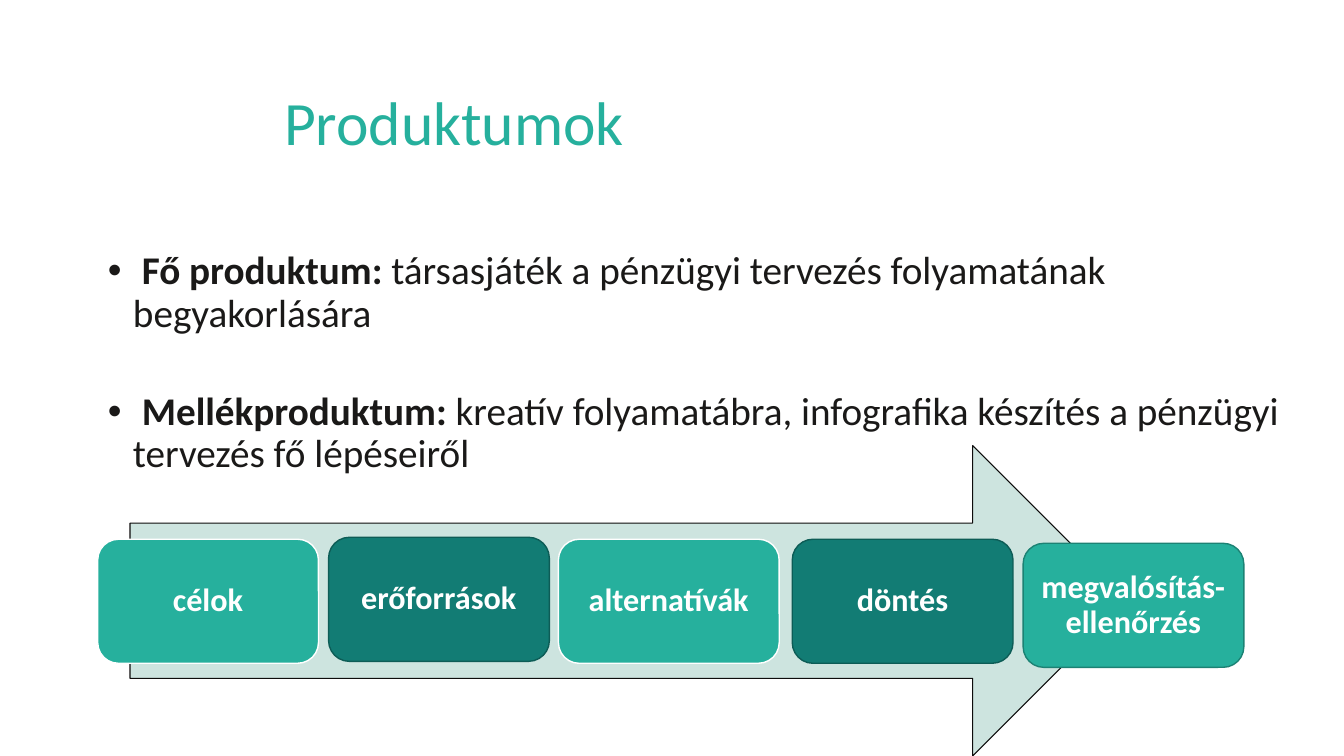
"""Build the "Produktumok" slide: two bulleted products above a five-step planning arrow."""
from dataclasses import dataclass

from lxml import etree
from pptx import Presentation
from pptx.dml.color import RGBColor
from pptx.enum import shapes, text
from pptx.oxml import ns
from pptx.util import Pt


@dataclass(frozen=True)
class Theme:
    """Colours, font and type sizes of the slide."""
    font: str = "Calibri"
    title: int = 44
    body: int = 28
    step: int = 23
    ink: str = "1A1918"
    teal: str = "26B09D"
    dark: str = "127C74"
    pale: str = "CDE4DF"
    white: str = "FFFFFF"
    arrow_line: str = "0D0C0C"
    dark_line: str = "0D5C56"
    teal_line: str = "1C8274"


T = Theme()

PRODUCTS = [
    (" Fő produktum: ", "társasjáték a pénzügyi tervezés folyamatának begyakorlására"),
    (" Mellékproduktum: ", "kreatív folyamatábra, infografika készítés a pénzügyi tervezés fő lépéseiről"),
]

STEPS = [
    ("célok", 69.8, 385.2, T.teal, T.white),
    ("erőforrások", 234.7, 383.8, T.dark, T.dark_line),
    ("alternatívák", 398.9, 385.2, T.teal, T.white),
    ("döntés", 565.9, 385.2, T.dark, T.dark_line),
    ("megvalósítás-ellenőrzés", 730.8, 388.1, T.teal, T.teal_line),
]


def place(sp, left, top, width, height):
    """Move and size a shape in points."""
    sp.left, sp.top, sp.width, sp.height = Pt(left), Pt(top), Pt(width), Pt(height)


def style(r, size, color, bold=False):
    """Format one run."""
    r.font.name, r.font.size, r.font.bold = T.font, Pt(size), bold
    r.font.color.rgb = RGBColor.from_string(color)


def add_title(s, title):
    """Fill the title placeholder."""
    sp = s.shapes.title
    place(sp, 195.8, 40.3, 698.4, 98.6)
    tf = sp.text_frame
    tf.text = title
    tf.vertical_anchor = text.MSO_ANCHOR.MIDDLE
    tf.auto_size = text.MSO_AUTO_SIZE.NONE
    p = tf.paragraphs[0]
    p.alignment, p.line_spacing = text.PP_ALIGN.LEFT, 0.9
    style(p.runs[0], T.title, T.teal)


def add_bullet(p):
    """Give a paragraph a round bullet with a hanging indent."""
    pPr = p._p.get_or_add_pPr()
    pPr.set("marL", str(Pt(18)))
    pPr.set("indent", str(-Pt(18)))
    etree.SubElement(pPr, ns.qn("a:buFont"), typeface="Arial")
    etree.SubElement(pPr, ns.qn("a:buChar"), char="•")


def add_products(s, products):
    """Fill the body placeholder with the bulleted products."""
    sp = s.placeholders[1]
    place(sp, 69.8, 175.7, 874.8, 307.4)
    tf = sp.text_frame
    tf.auto_size = text.MSO_AUTO_SIZE.NONE
    for i, (name, detail) in enumerate(products):
        p = tf.add_paragraph() if i else tf.paragraphs[0]
        add_bullet(p)
        p.line_spacing = 0.9
        p.space_before = Pt(40 if i else 0)
        for words, bold in ((name, True), (detail, False)):
            r = p.add_run()
            r.text = words
            style(r, T.body, T.ink, bold)


def add_block(s, kind, box, fill, line, weight):
    """Add a filled and outlined preset shape."""
    sp = s.shapes.add_shape(kind, *(Pt(v) for v in box))
    sp.shadow.inherit = False
    sp.fill.solid()
    sp.fill.fore_color.rgb = RGBColor.from_string(fill)
    sp.line.color.rgb = RGBColor.from_string(line)
    sp.line.width = Pt(weight)
    return sp


def add_step(s, label, left, top, fill, line):
    """Add one labelled step of the process."""
    sp = add_block(s, shapes.MSO_SHAPE.ROUNDED_RECTANGLE, (left, top, 157.7, 88.6), fill, line, 1)
    tf = sp.text_frame
    tf.text = label
    tf.word_wrap = True
    tf.vertical_anchor = text.MSO_ANCHOR.MIDDLE
    tf.margin_left = tf.margin_right = tf.margin_top = tf.margin_bottom = Pt(7)
    p = tf.paragraphs[0]
    p.alignment, p.line_spacing = text.PP_ALIGN.CENTER, 0.9
    style(p.runs[0], T.step, T.white, True)


def main():
    """Build and save the slide."""
    prs = Presentation()
    prs.slide_width, prs.slide_height = Pt(960), Pt(540)
    s = prs.slides.add_slide(prs.slide_layouts[1])
    add_title(s, "Produktumok")
    add_products(s, PRODUCTS)
    add_block(s, shapes.MSO_SHAPE.RIGHT_ARROW, (92.9, 318.2, 712.8, 221.8), T.pale, T.arrow_line, 0.75)
    for step in STEPS:
        add_step(s, *step)
    prs.save("out.pptx")


if __name__ == "__main__":
    main()
